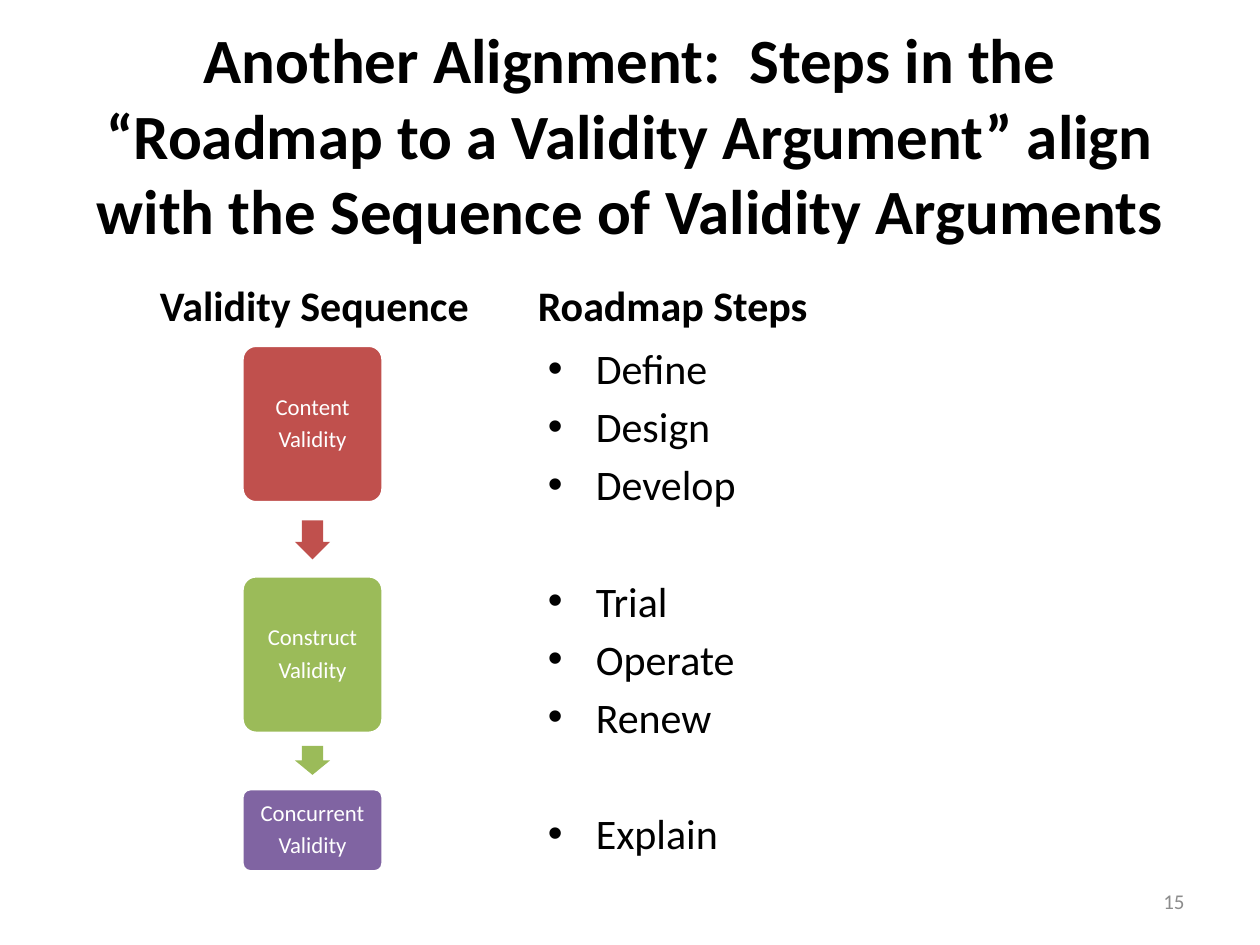
"""Build the slide that aligns roadmap steps with the validity sequence."""
from lxml import etree
from pptx import Presentation
from pptx import util as u
from pptx.dml import color
from pptx.enum import shapes, text
from pptx.oxml import ns

PX = 9144
SHAPE, ALIGN, ANCHOR = shapes.MSO_SHAPE, text.PP_ALIGN, text.MSO_ANCHOR


def paint(part, shade):
    if hasattr(part, "solid"):
        part.solid()
        part = part.fore_color
    else:
        part = part.color
    part.rgb = color.RGBColor.from_string(shade)


def write(frame, lines, size, shade="000000", bold=False, anchor=ANCHOR.TOP, **form):
    frame.word_wrap = True
    frame.vertical_anchor = anchor
    for num, line in enumerate(lines):
        para = frame.add_paragraph() if num else frame.paragraphs[0]
        for key, val in form.items():
            setattr(para, key, val)
        run = para.add_run()
        run.text = line
        for key, val in {"name": "Calibri", "size": u.Pt(size), "bold": bold}.items():
            setattr(run.font, key, val)
        paint(run.font, shade)
    return frame.paragraphs


deck = Presentation()
deck.slide_width, deck.slide_height = 1000 * PX, 750 * PX
slide = deck.slides.add_slide(deck.slide_layouts[6])
items = slide.shapes

title = "Another Alignment:  Steps in the “Roadmap to a Validity Argument” align with the Sequence of Validity Arguments"
head = {"size": 24, "bold": True, "anchor": ANCHOR.BOTTOM, "space_before": u.Pt(4.8)}
labels = [
    ((50, 30, 900, 153), title, {"size": 36, "bold": True, "anchor": ANCHOR.MIDDLE, "alignment": ALIGN.CENTER}),
    ((117, 193, 275, 74), "Validity Sequence", head),
    ((417, 197, 275, 70), "Roadmap Steps", head),
    ((717, 695, 233, 40), "15", {"size": 12, "shade": "8C8C8C", "anchor": ANCHOR.MIDDLE, "alignment": ALIGN.RIGHT}),
]
for place, label, look in labels:
    box = items.add_textbox(*[n * PX for n in place])
    write(box.text_frame, [label], **look)

stages = [
    ("Content", "C0504D", 274, 125),
    ("Construct", "9BBB59", 457, 125),
    ("Concurrent", "8064A2", 626, 66),
]
for name, shade, top, high in stages:
    card = items.add_shape(SHAPE.ROUNDED_RECTANGLE, 192 * PX, top * PX, 112 * PX, high * PX)
    card.adjustments[0] = 0.1
    card.shadow.inherit = False
    paint(card.fill, shade)
    paint(card.line, "FFFFFF")
    card.line.width = u.Pt(2)
    frame = card.text_frame
    for side in ("left", "top", "right", "bottom"):
        setattr(frame, "margin_" + side, 5 * PX)
    write(frame, [name, "Validity"], 13, "FFFFFF", anchor=ANCHOR.MIDDLE,
          alignment=ALIGN.CENTER, line_spacing=0.9, space_after=u.Pt(4.5))

for shade, top, high in [("C0504D", 413, 31), ("9BBB59", 592, 23)]:
    arrow = items.add_shape(SHAPE.DOWN_ARROW, 234 * PX, top * PX, 28 * PX, high * PX)
    arrow.adjustments[0], arrow.adjustments[1] = 0.6, 0.5
    arrow.shadow.inherit = False
    paint(arrow.fill, shade)
    arrow.line.fill.background()

groups = [["Define", "Design", "Develop"], ["Trial", "Operate", "Renew"], ["Explain"]]
starts = [group[0] for group in groups[1:]]
steps = items.add_textbox(425 * PX, 267 * PX, 525 * PX, 467 * PX)
for para in write(steps.text_frame, sum(groups, []), 24, space_before=u.Pt(4.3)):
    if para.text in starts:
        para.space_before = u.Pt(37.9)
    props = para._p.get_or_add_pPr()
    props.set("marL", str(38 * PX))
    props.set("indent", str(-38 * PX))
    etree.SubElement(props, ns.qn("a:buFont")).set("typeface", "Arial")
    etree.SubElement(props, ns.qn("a:buChar")).set("char", "•")

deck.save("out.pptx")
